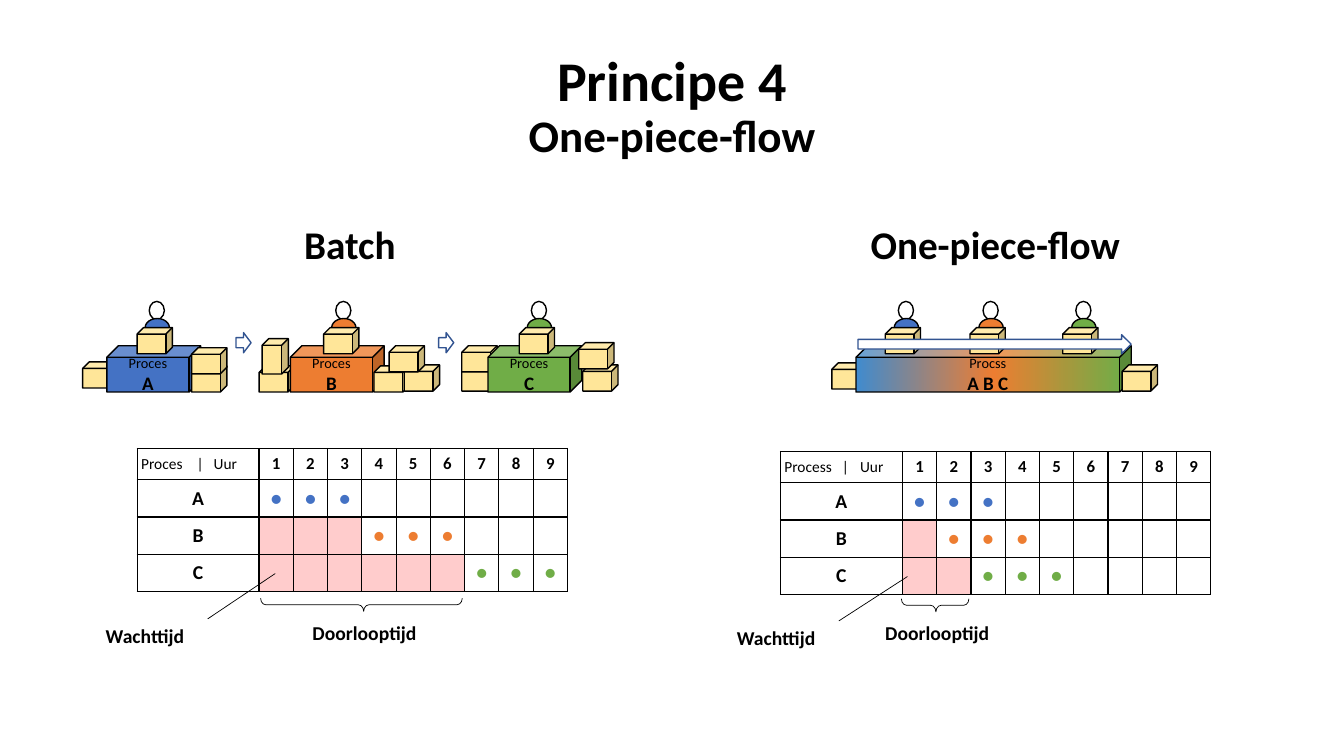
import copy
from dataclasses import dataclass

import pptx
import pptx.dml.color
import pptx.enum.shapes
import pptx.enum.text
import pptx.oxml.ns
import pptx.util
from lxml import etree

PX = 9144  # EMU per px, 100 px to the inch
SHAPE = pptx.enum.shapes.MSO_SHAPE
CENTER = pptx.enum.text.PP_ALIGN.CENTER
LEFT = pptx.enum.text.PP_ALIGN.LEFT
MIDDLE = pptx.enum.text.MSO_ANCHOR.MIDDLE
qn = pptx.oxml.ns.qn


@dataclass(frozen=True)
class Theme:
    font: str = "Calibri"
    black: str = "000000"
    white: str = "FFFFFF"
    blue: str = "4472C4"
    orange: str = "ED7D31"
    green: str = "70AD47"
    sky: str = "408BCE"
    crate: str = "FFE699"
    waiting: str = "FFCCCC"
    arrow_line: str = "325491"
    title: float = 40
    subtitle: float = 32.2
    heading: float = 28
    label: float = 14
    hour: float = 12
    corner: float = 11
    bench: float = 10.2
    bench_letter: float = 13.6


THEME = Theme()
PROCESSES = (("A", THEME.blue), ("B", THEME.orange), ("C", THEME.green))


def px(*lengths):
    return [pptx.util.Emu(length * PX) for length in lengths]


def rgb(color):
    return pptx.dml.color.RGBColor.from_string(color)


def write(para, text, size, bold=False, color=THEME.black, align=CENTER):
    para.alignment = align
    span = para.add_run()
    span.text = text
    span.font.name = THEME.font
    span.font.size = pptx.util.Pt(size)
    span.font.bold = bold
    span.font.color.rgb = rgb(color)


def add_text(page, place, lines, align=CENTER, spacing=None):
    """Place a text box of bold lines, each given as (text, size)."""
    frame = page.shapes.add_textbox(*px(*place)).text_frame
    frame.word_wrap = True
    for number, (text, size) in enumerate(lines):
        para = frame.add_paragraph() if number else frame.paragraphs[0]
        if spacing:
            para.line_spacing = spacing
        write(para, text, size, True, align=align)


def add_outline(parent, kind, place, fill=None, line=THEME.black, width=1):
    shape = parent.shapes.add_shape(kind, *px(*place))
    shape.shadow.inherit = False
    if fill:
        shape.fill.solid()
        shape.fill.fore_color.rgb = rgb(fill)
    else:
        shape.fill.background()
    shape.line.color.rgb = rgb(line)
    shape.line.width = pptx.util.Pt(width)
    return shape


def add_worker(parent, left, color):
    add_outline(parent, SHAPE.OVAL, (left, 299, 15, 18))
    add_outline(parent, SHAPE.OVAL, (left - 4, 316, 24, 18), color)


def add_crate(parent, left, top, width=35, height=26):
    add_outline(parent, SHAPE.CUBE, (left, top, width, height), THEME.crate)


def add_bench(parent, left, width, caption, letters, color):
    bench = add_outline(parent, SHAPE.CUBE, (left, 343, width, 46), color)
    frame = bench.text_frame
    frame.margin_left = frame.margin_right = frame.margin_top = frame.margin_bottom = 0
    frame.vertical_anchor = MIDDLE
    write(frame.paragraphs[0], caption, THEME.bench)
    write(frame.add_paragraph(), letters, THEME.bench_letter, True)
    return bench


def blend(shape, stops):
    """Fill from left to right through (position, color) stops."""
    shape.fill.gradient()
    shape.fill.gradient_angle = 0
    stop_list = shape._element.spPr.find(".//" + qn("a:gsLst"))
    while len(stop_list) < len(stops):
        stop_list.append(copy.deepcopy(stop_list[0]))
    for stop, (position, color) in zip(shape.fill.gradient_stops, stops):
        stop.position = position
        stop.color.rgb = rgb(color)


def add_arrow(parent, *place):
    add_outline(parent, SHAPE.RIGHT_ARROW, place, THEME.white, THEME.arrow_line)


def add_borders(cell):
    properties = cell._tc.get_or_add_tcPr()
    for index, side in enumerate(("a:lnL", "a:lnR", "a:lnT", "a:lnB")):
        line = etree.Element(qn(side), w=str(pptx.util.Pt(1)))
        fill = etree.SubElement(line, qn("a:solidFill"))
        etree.SubElement(fill, qn("a:srgbClr"), val=THEME.black)
        properties.insert(index, line)


def fill_cell(cell, text="", size=THEME.label, fill=None, **style):
    margin = px(4 if text else 0)[0]
    cell.margin_left = cell.margin_right = cell.margin_top = cell.margin_bottom = margin
    cell.vertical_anchor = MIDDLE
    if fill:
        cell.fill.solid()
        cell.fill.fore_color.rgb = rgb(fill)
    else:
        cell.fill.background()
    add_borders(cell)
    if text:
        write(cell.text_frame.paragraphs[0], text, size, **style)


def add_schedule(page, left, top, corner, tabs, starts):
    """Three working hours per process; the hours before its start are waiting."""
    table = page.shapes.add_table(4, 10, *px(left, top, 423, 140)).table
    table.first_row = table.horz_banding = False
    for column, width in zip(table.columns, px(121, *[34] * 9)):
        column.width = width
    for row, height in zip(table.rows, px(31, 37, 37, 37)):
        row.height = height
    # Header row
    head = table.cell(0, 0)
    stops = etree.SubElement(head.text_frame.paragraphs[0]._p.get_or_add_pPr(), qn("a:tabLst"))
    for position in px(*tabs):
        etree.SubElement(stops, qn("a:tab"), pos=str(position), algn="l")
    fill_cell(head, corner, THEME.corner, align=LEFT)
    for hour in range(1, 10):
        fill_cell(table.cell(0, hour), str(hour), THEME.hour, bold=True)
    # Process rows
    for row, ((letter, color), start) in enumerate(zip(PROCESSES, starts), 1):
        fill_cell(table.cell(row, 0), letter, bold=True)
        for hour in range(1, 10):
            cell = table.cell(row, hour)
            if hour <= start:
                fill_cell(cell, fill=THEME.waiting)
            elif hour <= start + 3:
                fill_cell(cell, "●", color=color)
            else:
                fill_cell(cell)


def add_pointer(page, *ends):
    line = page.shapes.add_connector(pptx.enum.shapes.MSO_CONNECTOR.STRAIGHT, *px(*ends))
    line.line.color.rgb = rgb(THEME.black)
    line.line.width = pptx.util.Pt(0.5)
    etree.SubElement(line._element.spPr, qn("a:effectLst"))


def add_brace(page, left, width):
    half = width // 2
    place = (left + half - 7, 600 - half, 13, width)
    brace = add_outline(page, SHAPE.LEFT_BRACE, place, width=0.5)
    brace.rotation = 270
    brace.adjustments[0], brace.adjustments[1] = 0.404, 0.511


def add_notes(page, wait_left, wait_top, pointer, lead_left, brace):
    add_text(page, (wait_left, wait_top, 221, 34), [("Wachttijd", THEME.label)], LEFT)
    add_pointer(page, *pointer)
    add_text(page, (lead_left, 611, 221, 34), [("Doorlooptijd", THEME.label)])
    add_brace(page, *brace)


def add_batch_line(page):
    group = page.shapes.add_group_shape()
    stations = list(zip((148, 333, 527), (106, 288, 484), PROCESSES))
    for worker, _, (_, color) in stations:
        add_worker(group, worker, color)
    for crate in ((458, 362), (458, 343), (257, 363), (260, 336, 26, 35), (82, 359)):
        add_crate(group, *crate)
    for worker, bench, (letter, color) in stations:
        add_bench(group, bench, 93, "Proces", letter, color)
        add_crate(group, worker - 12, 325)
    for crate in ((190, 363), (190, 345), (371, 363), (401, 362), (386, 343), (578, 362), (574, 340)):
        add_crate(group, *crate)
    for left in (234, 435):
        add_arrow(group, left, 330, 15, 20)


def add_flow_line(page):
    group = page.shapes.add_group_shape()
    workers = (891, 975, 1067)
    for worker, (_, color) in zip(workers, PROCESSES):
        add_worker(group, worker, color)
    add_crate(group, 825, 360)
    bench = add_bench(group, 849, 273, "Procss", "A B C", THEME.sky)
    blend(bench, ((0, THEME.sky), (0.5, THEME.orange), (0.97, THEME.green)))
    for worker in workers:
        add_crate(group, worker - 13, 325)
    add_crate(group, 1113, 362)
    add_arrow(group, 851, 332, 271, 19)


def main():
    deck = pptx.Presentation()
    deck.slide_width, deck.slide_height = px(1333, 750)
    page = deck.slides.add_slide(deck.slide_layouts[6])
    # Title
    title = [("Principe 4", THEME.title), ("One-piece-flow", THEME.subtitle)]
    add_text(page, (0, 48, 1333, 131), title, spacing=0.9)
    # Batch
    add_text(page, (28, 219, 638, 55), [("Batch", THEME.heading)], spacing=0.9)
    add_batch_line(page)
    add_schedule(page, 136, 445, "Proces\t|\tUur", (55, 72), (0, 3, 6))
    add_notes(page, 95, 614, (206, 614, 273, 569), 251, (259, 200))
    # One-piece-flow
    add_text(page, (667, 219, 640, 55), [("One-piece-flow", THEME.heading)], spacing=0.9)
    add_flow_line(page)
    add_schedule(page, 774, 448, "Process\t|\tUur", (57, 75), (0, 1, 2))
    add_notes(page, 721, 616, (832, 616, 900, 572), 819, (895, 67))
    deck.save("out.pptx")


if __name__ == "__main__":
    main()
